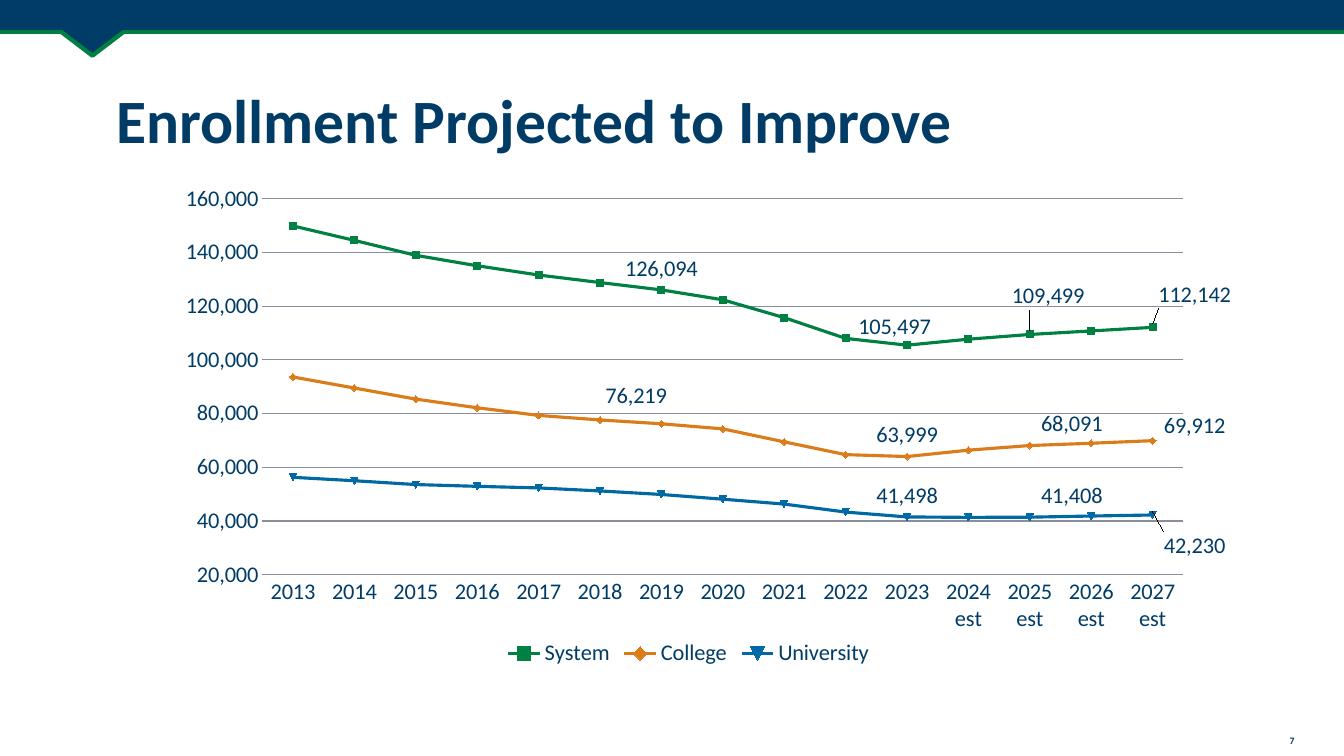
from dataclasses import dataclass

from lxml import etree
from pptx import Presentation
from pptx.chart.data import CategoryChartData
from pptx.dml.color import RGBColor
from pptx.enum.chart import XL_CHART_TYPE, XL_LABEL_POSITION, XL_LEGEND_POSITION, XL_TICK_MARK
from pptx.enum.shapes import MSO_CONNECTOR, MSO_SHAPE
from pptx.enum.text import MSO_ANCHOR, PP_ALIGN
from pptx.oxml import parse_xml
from pptx.oxml.ns import qn
from pptx.util import Pt

LINE_MARKERS = XL_CHART_TYPE.LINE_MARKERS
ABOVE = XL_LABEL_POSITION.ABOVE
BOTTOM = XL_LEGEND_POSITION.BOTTOM
NO_TICK = XL_TICK_MARK.NONE
STRAIGHT = MSO_CONNECTOR.STRAIGHT
TRIANGLE, RECTANGLE = MSO_SHAPE.ISOSCELES_TRIANGLE, MSO_SHAPE.RECTANGLE
MIDDLE = MSO_ANCHOR.MIDDLE
LEFT, CENTER = PP_ALIGN.LEFT, PP_ALIGN.CENTER
C15 = "http://schemas.microsoft.com/office/drawing/2012/chart"


@dataclass(frozen=True)
class Theme:
    font: str = "Calibri"
    navy: RGBColor = RGBColor(0x00, 0x3C, 0x66)
    green: RGBColor = RGBColor(0x00, 0x80, 0x42)
    orange: RGBColor = RGBColor(0xDB, 0x7C, 0x1B)
    blue: RGBColor = RGBColor(0x00, 0x69, 0xA4)
    grid: RGBColor = RGBColor(0x8A, 0x8D, 0x9C)
    title_size: int = 44
    chart_size: int = 16
    number_size: int = 7


T = Theme()

YEARS = [str(y) for y in range(2013, 2024)] + [f"{y} est" for y in range(2024, 2028)]

# Name, colour, values, and label shifts (points) keyed by year index
SERIES = [
    ("System", T.green,
     [149919, 144524, 138973, 135089, 131640, 128830, 126094, 122412,
      115758, 108034, 105497, 107727, 109499, 110803, 112142],
     {6: (0, 0), 10: (-9, 2), 12: (13, -12), 14: (30, -8)}),
    ("College", T.orange,
     [93664, 89541, 85410, 82185, 79329, 77648, 76219, 74300,
      69472, 64710, 63999, 66384, 68091, 68957, 69912],
     {6: (-18, -5), 10: (0, 0), 12: (30, 0), 14: (30, 5)}),
    ("University", T.blue,
     [56255, 54983, 53564, 52904, 52311, 51182, 49874, 48112,
      46286, 43323, 41498, 41343, 41408, 41846, 42230],
     {10: (0, 0), 12: (30, 0), 14: (30, 37)}),
]


def style_font(font, size):
    font.name, font.size = T.font, Pt(size)
    font.color.rgb = T.navy


def add_header(slide, x, y, w, h):
    """Navy band with a green rule and a pointer hanging below it."""
    rule = slide.shapes.add_connector(STRAIGHT, Pt(x), Pt(y + h + 1.3), Pt(x + w), Pt(y + h + 1.3))
    rule.line.color.rgb, rule.line.width = T.green, Pt(3)
    etree.SubElement(rule._element.spPr, qn("a:effectLst"))

    pointer = slide.shapes.add_shape(TRIANGLE, Pt(x + 28), Pt(y + h / 2), Pt(76), Pt(29))
    pointer.rotation = 180
    pointer.line.color.rgb, pointer.line.width = T.green, Pt(3)
    band = slide.shapes.add_shape(RECTANGLE, Pt(x), Pt(y), Pt(w), Pt(h))
    band.line.fill.background()
    for sp in (pointer, band):
        sp.shadow.inherit = False
        sp.fill.solid()
        sp.fill.fore_color.rgb = T.navy


def add_title(slide, x, y, w, h):
    sp = slide.shapes.title
    sp.left, sp.top, sp.width, sp.height = Pt(x), Pt(y), Pt(w), Pt(h)
    tf = sp.text_frame
    tf.word_wrap, tf.vertical_anchor, tf.margin_left = True, MIDDLE, Pt(17)
    p = tf.paragraphs[0]
    p.alignment, p.line_spacing = LEFT, 0.9
    r = p.add_run()
    r.text = "Enrollment Projected to Improve"
    style_font(r.font, T.title_size)
    r.font.bold = True


def add_page_number(slide, x, y, w, h):
    tf = slide.shapes.add_textbox(Pt(x), Pt(y), Pt(w), Pt(h)).text_frame
    tf.word_wrap = True
    p = tf.paragraphs[0]
    p.alignment = CENTER
    r = p.add_run()
    r.text = "7"
    style_font(r.font, T.number_size)
    r.font.bold = True


def manual_layout(**parts):
    layout = etree.Element(qn("c:layout"))
    manual = etree.SubElement(layout, qn("c:manualLayout"))
    for tag, val in parts.items():
        etree.SubElement(manual, qn(f"c:{tag}")).set("val", str(val))
    return layout


def label_points(ser, shifts, w, h):
    """Label the key years, shifted from above the point, with leader lines."""
    labels = ser.data_labels
    labels.show_value = False
    for i, (dx, dy) in shifts.items():
        ser.points[i].data_label.position = ABOVE
        if dx or dy:
            idx = labels._element.xpath(f"c:dLbl/c:idx[@val='{i}']")[0]
            idx.addnext(manual_layout(x=round(dx / w, 4), y=round(dy / h, 4)))
    labels._element.append(parse_xml(
        f'<c:extLst xmlns:c="http://schemas.openxmlformats.org/drawingml/2006/chart">'
        f'<c:ext uri="{{CE6537A1-D6FC-4f65-9D91-7224C49458BB}}" xmlns:c15="{C15}">'
        f'<c15:showLeaderLines val="1"/></c:ext></c:extLst>'))


def add_enrollment_chart(slide, x, y, w, h):
    data = CategoryChartData(number_format="#,##0")
    data.categories = YEARS
    for name, _, values, _ in SERIES:
        data.add_series(name, values)
    chart = slide.shapes.add_chart(LINE_MARKERS, Pt(x), Pt(y), Pt(w), Pt(h), data).chart
    chart.has_title = False
    style_font(chart.font, T.chart_size)

    # Axes, gridlines and legend
    years, heads = chart.category_axis, chart.value_axis
    years.major_tick_mark = heads.major_tick_mark = NO_TICK
    heads.minimum_scale, heads.maximum_scale, heads.major_unit = 20000, 160000, 20000
    heads.tick_labels.number_format = "#,##0"
    heads.tick_labels.number_format_is_linked = False
    heads.format.line.fill.background()
    for line in (years.format.line, heads.major_gridlines.format.line):
        line.color.rgb, line.width = T.grid, Pt(0.75)
    chart.has_legend = True
    chart.legend.position, chart.legend.include_in_layout = BOTTOM, False

    # Plot area within the chart frame
    area = chart._chartSpace.chart.plotArea
    for old in area.findall(qn("c:layout")):
        area.remove(old)
    area.insert(0, manual_layout(layoutTarget="inner", xMode="edge", yMode="edge",
                                 x=0.11, y=0.029, w=0.843, h=0.772))

    # Series lines, markers and labels
    for ser, (_, color, _, shifts) in zip(chart.plots[0].series, SERIES):
        ser.smooth = False
        ser.format.line.color.rgb, ser.format.line.width = color, Pt(2.25)
        ser.marker.size = 5
        ser.marker.format.fill.solid()
        ser.marker.format.fill.fore_color.rgb = color
        ser.marker.format.line.color.rgb = color
        label_points(ser, shifts, w, h)


def main():
    prs = Presentation()
    prs.slide_width, prs.slide_height = Pt(960), Pt(540)
    slide = prs.slides.add_slide(prs.slide_layouts[5])
    add_header(slide, 0, 0, 960, 21.6)
    add_page_number(slide, 905, 521.5, 36, 16)
    add_title(slide, 66, 36, 828, 104.5)
    add_enrollment_chart(slide, 101.5, 132, 780.5, 347.75)
    prs.save("out.pptx")


if __name__ == "__main__":
    main()
